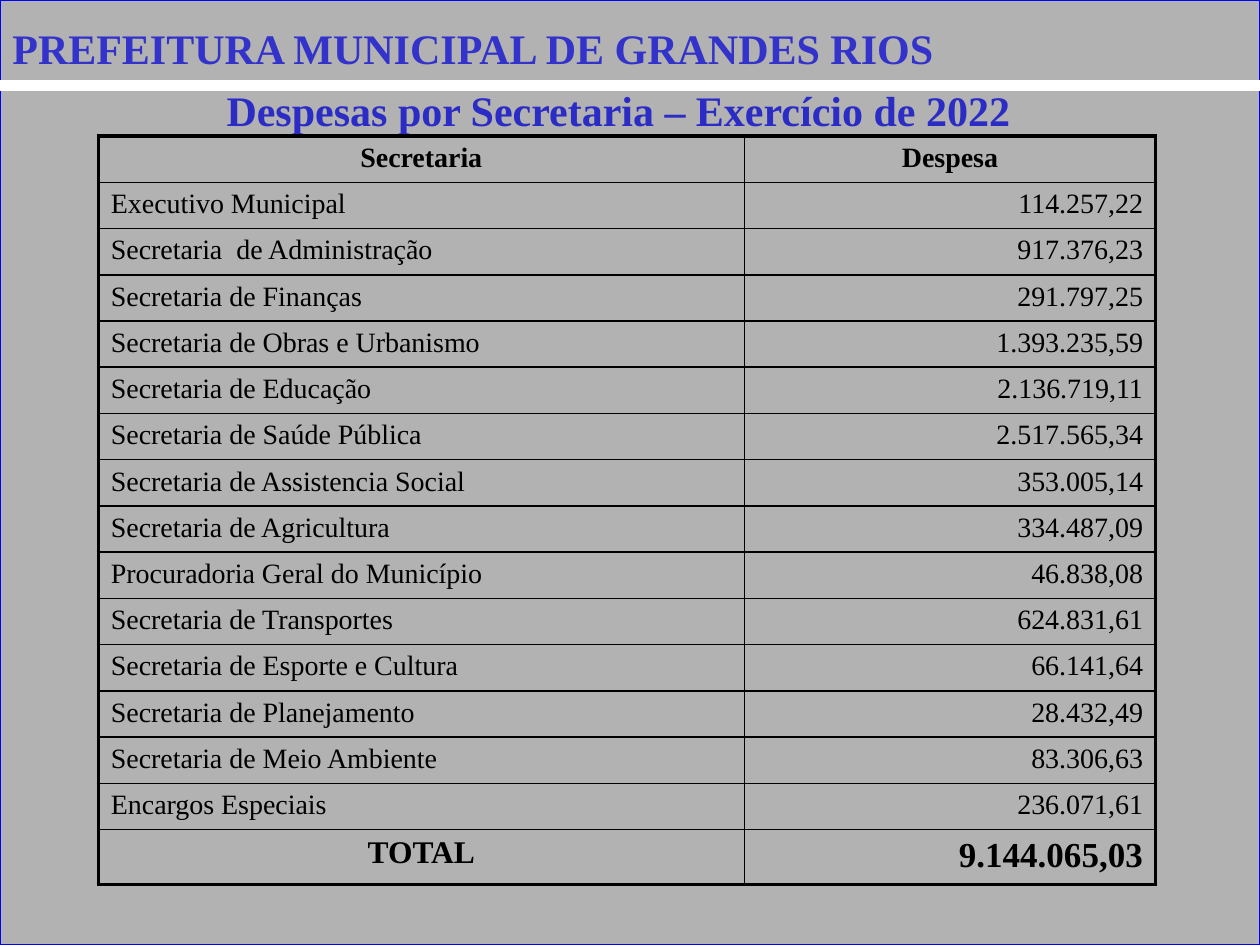
from dataclasses import dataclass

from lxml import etree
from pptx import Presentation
from pptx import util as u
from pptx.dml.color import RGBColor
from pptx.enum import shapes, text
from pptx.oxml import ns

COLORS = {
    "background": "B2B2B2",
    "outline": "0000FF",
    "rule": "FFFFFF",
    "title": "3333CC",
    "subtitle": "2B2BC5",
    "ink": "000000",
    "shadow": "808080",
}
FONT = "Times New Roman"
LEFT, CENTER, RIGHT = text.PP_ALIGN.LEFT, text.PP_ALIGN.CENTER, text.PP_ALIGN.RIGHT
PAGE_WIDTH, PAGE_HEIGHT = 720, 540
COLUMN_WIDTHS = (369.2, 235)
ROW_HEIGHT, TOTAL_HEIGHT = 26.4, 31
THIN, THICK = 1, 2.25


@dataclass
class Heading:
    words: str
    left: float
    top: float
    width: float
    color: str
    align: text.PP_ALIGN
    shadow: bool = False


@dataclass
class Entry:
    name: str
    amount: str
    name_align: text.PP_ALIGN = LEFT
    amount_align: text.PP_ALIGN = RIGHT
    name_size: float = 16
    amount_size: float = 16
    bold: bool = False


HEADINGS = [
    Heading("Despesas por Secretaria – Exercício de 2022 ", 17.28, 44.64, 678.24, "subtitle", CENTER),
    Heading("PREFEITURA MUNICIPAL DE GRANDES RIOS", 0, 9.36, 683.28, "title", LEFT, True),
]
ENTRIES = [
    Entry("Secretaria", "Despesa", CENTER, CENTER, bold=True),
    Entry("Executivo Municipal", "114.257,22"),
    Entry("Secretaria  de Administração", "917.376,23"),
    Entry("Secretaria de Finanças", "291.797,25"),
    Entry("Secretaria de Obras e Urbanismo", "1.393.235,59"),
    Entry("Secretaria de Educação", "2.136.719,11"),
    Entry("Secretaria de Saúde Pública", "2.517.565,34"),
    Entry("Secretaria de Assistencia Social", "353.005,14"),
    Entry("Secretaria de Agricultura", "334.487,09"),
    Entry("Procuradoria Geral do Município", "46.838,08"),
    Entry("Secretaria de Transportes", "624.831,61"),
    Entry("Secretaria de Esporte e Cultura", "66.141,64"),
    Entry("Secretaria de Planejamento", "28.432,49"),
    Entry("Secretaria de Meio Ambiente", "83.306,63"),
    Entry("Encargos Especiais", "236.071,61"),
    Entry("TOTAL", "9.144.065,03", CENTER, RIGHT, 18, 20, True),
]


def color(name: str) -> RGBColor:
    return RGBColor.from_string(COLORS[name])


def write(para, words: str, size: float, ink: str, bold: bool, align: text.PP_ALIGN):
    span = para.add_run()
    span.text = words
    para.alignment = align
    para.font.name = FONT
    para.font.size = u.Pt(size)
    para.font.bold = bold
    para.font.color.rgb = color(ink)
    return span


def add_text_shadow(span) -> None:
    effects = etree.SubElement(span._r.get_or_add_rPr(), ns.qn("a:effectLst"))
    shadow = etree.SubElement(effects, ns.qn("a:outerShdw"), dist=str(u.Pt(2)), dir="2700000")
    etree.SubElement(shadow, ns.qn("a:srgbClr"), val=COLORS["shadow"])


def add_background(page) -> None:
    panel = page.shapes.add_shape(
        shapes.MSO_SHAPE.RECTANGLE, 0, 0, u.Pt(PAGE_WIDTH), u.Pt(PAGE_HEIGHT)
    )
    panel.shadow.inherit = False
    panel.fill.solid()
    panel.fill.fore_color.rgb = color("background")
    panel.line.color.rgb = color("outline")
    panel.line.width = u.Pt(0.75)


def add_heading(page, heading: Heading) -> None:
    box = page.shapes.add_textbox(
        u.Pt(heading.left), u.Pt(heading.top), u.Pt(heading.width), u.Pt(36)
    )
    frame = box.text_frame
    frame.word_wrap = True
    para = frame.paragraphs[0]
    para.space_before = u.Pt(3)
    span = write(para, heading.words, 24, heading.color, True, heading.align)
    if heading.shadow:
        add_text_shadow(span)


def add_rule(page) -> None:
    height = u.Pt(48.96)
    rule = page.shapes.add_connector(
        shapes.MSO_CONNECTOR.STRAIGHT, 0, height, u.Pt(PAGE_WIDTH), height
    )
    rule.line.color.rgb = color("rule")
    rule.line.width = u.Pt(6)
    etree.SubElement(rule._element.spPr, ns.qn("a:effectLst"))


def set_borders(cell, widths: dict[str, float]) -> None:
    properties = cell._tc.get_or_add_tcPr()
    for position, (side, width) in enumerate(widths.items()):
        border = etree.Element(ns.qn(f"a:ln{side}"), w=str(u.Pt(width)))
        fill = etree.SubElement(border, ns.qn("a:solidFill"))
        etree.SubElement(fill, ns.qn("a:srgbClr"), val=COLORS["ink"])
        properties.insert(position, border)


def add_expense_table(page, entries: list[Entry]) -> None:
    heights = [ROW_HEIGHT] * (len(entries) - 1) + [TOTAL_HEIGHT]
    table = page.shapes.add_table(
        len(entries), 2, u.Pt(56.16), u.Pt(77.76), u.Pt(sum(COLUMN_WIDTHS)), u.Pt(sum(heights))
    ).table
    table.first_row = False
    table.horz_banding = False
    for column, width in zip(table.columns, COLUMN_WIDTHS):
        column.width = u.Pt(width)
    last = len(entries) - 1
    for index, (entry, height) in enumerate(zip(entries, heights)):
        table.rows[index].height = u.Pt(height)
        contents = (
            (entry.name, entry.name_size, entry.name_align),
            (entry.amount, entry.amount_size, entry.amount_align),
        )
        for side, (words, size, align) in enumerate(contents):
            cell = table.cell(index, side)
            cell.fill.background()
            write(cell.text_frame.paragraphs[0], words, size, "ink", entry.bold, align)
            set_borders(cell, {
                "L": THICK if side == 0 else THIN,
                "R": THICK if side == 1 else THIN,
                "T": THICK if index == 0 else THIN,
                "B": THICK if index == last else THIN,
            })


def main() -> None:
    deck = Presentation()
    deck.slide_width = u.Pt(PAGE_WIDTH)
    deck.slide_height = u.Pt(PAGE_HEIGHT)
    page = deck.slides.add_slide(deck.slide_layouts[6])
    subtitle, title = HEADINGS
    add_background(page)
    add_heading(page, subtitle)
    add_rule(page)
    add_heading(page, title)
    add_expense_table(page, ENTRIES)
    deck.save("out.pptx")


if __name__ == "__main__":
    main()
